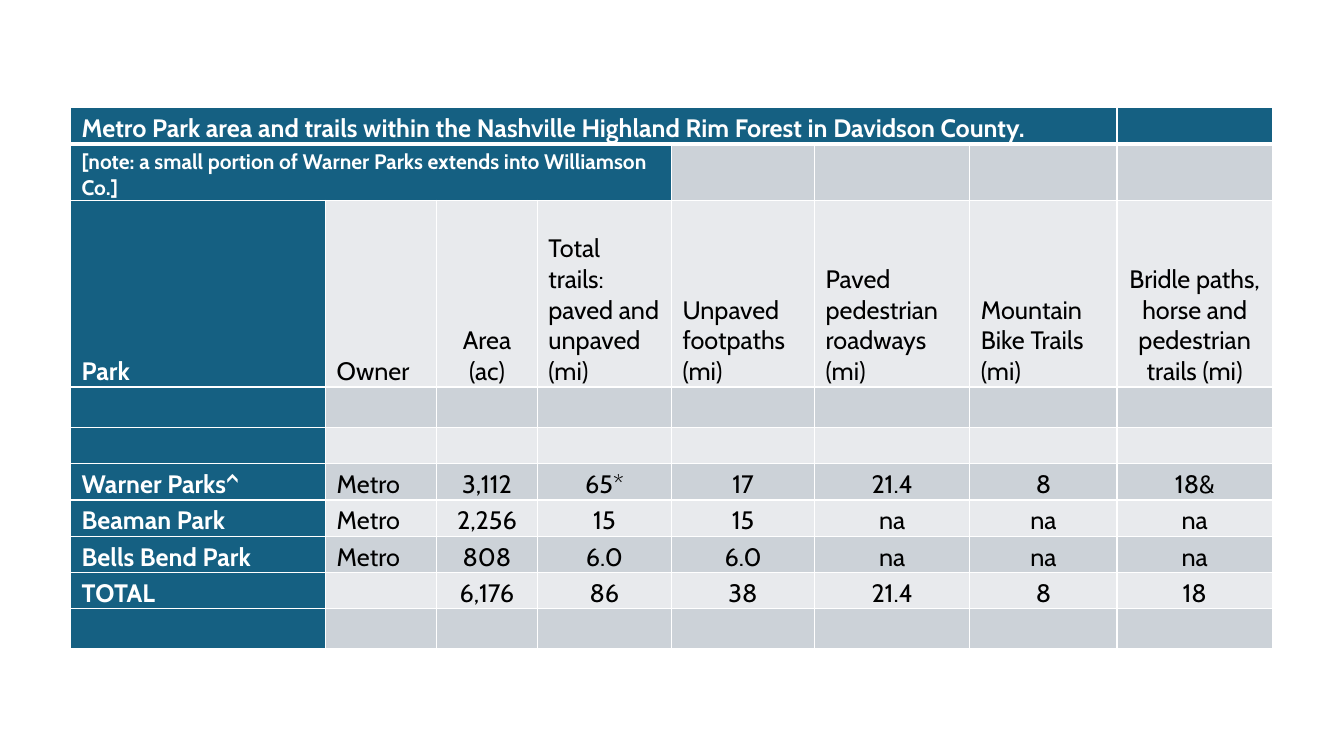
from lxml import etree
from pptx import Presentation
from pptx import util as u
from pptx.dml.color import RGBColor
from pptx.enum import text
from pptx.oxml import ns

WHITE = RGBColor(0xFF, 0xFF, 0xFF)
BLACK = RGBColor(0x00, 0x00, 0x00)
BLUE = RGBColor(0x15, 0x60, 0x82)
BAND_DARK = RGBColor(0xCC, 0xD2, 0xD8)
BAND_LIGHT = RGBColor(0xE8, 0xEA, 0xED)

# Table content
TITLE = "Metro Park area and trails within the Nashville Highland Rim Forest in Davidson County."
NOTE = "[note: a small portion of Warner Parks extends into Williamson Co.]"
COL_WIDTHS = [2.53, 1.1, 1, 1.33, 1.42, 1.54, 1.46, 1.54]
ROW_HEIGHTS = [0.36, 0.56, 1.85, 0.4, 0.36, 0.36, 0.36, 0.36, 0.36, 0.4]
EMPTY = [""] * 8
ROWS = [
    [TITLE] + [""] * 7,
    [NOTE] + [""] * 7,
    ["Park", "Owner", "Area (ac)", "Total trails: paved and unpaved (mi)",
     "Unpaved footpaths (mi)", "Paved pedestrian roadways (mi)",
     "Mountain Bike Trails (mi)", "Bridle paths, horse and pedestrian trails (mi)"],
    EMPTY,
    EMPTY,
    ["Warner Parks^", "Metro", "3,112", "65*", "17", "21.4", "8", "18&"],
    ["Beaman Park", "Metro", "2,256", "15", "15", "na", "na", "na"],
    ["Bells Bend Park", "Metro", "808", "6.0", "6.0", "na", "na", "na"],
    ["TOTAL", "", "6,176", "86", "38", "21.4", "8", "18"],
    EMPTY,
]
TITLE_ROW, NOTE_ROW, HEAD_ROW = 0, 1, 2
SPANS = {TITLE_ROW: 7, NOTE_ROW: 4}
CENTRED_HEADS = (2, 7)


class Deck:
    """Holds the style and the current slide."""

    font = "Cabin"
    size = 18

    def __init__(self):
        self.prs = Presentation()
        self.prs.slide_width = u.Inches(13.33)
        self.prs.slide_height = u.Inches(7.5)
        self.s = self.prs.slides.add_slide(self.prs.slide_layouts[6])

    def table(self, left, top, widths, heights):
        sp = self.s.shapes.add_table(
            len(heights), len(widths), u.Inches(left), u.Inches(top),
            u.Inches(sum(widths)), u.Inches(sum(heights)))
        for column, width in zip(sp.table.columns, widths):
            column.width = u.Inches(width)
        for row, height in zip(sp.table.rows, heights):
            row.height = u.Inches(height)
        return sp.table

    def cell(self, cell, words, fill, color, bold, size, centred):
        cell.margin_left = cell.margin_right = u.Inches(0.11)
        cell.margin_top = cell.margin_bottom = 0
        cell.vertical_anchor = text.MSO_ANCHOR.BOTTOM
        cell.fill.solid()
        cell.fill.fore_color.rgb = fill
        p = cell.text_frame.paragraphs[0]
        p.alignment = text.PP_ALIGN.CENTER if centred else text.PP_ALIGN.LEFT
        if words:
            r = p.add_run()
            r.text = words
            r.font.name = self.font
            r.font.size = u.Pt(size)
            r.font.bold = bold
            r.font.color.rgb = color

    def borders(self, cell, top=1, bottom=1):
        tc_pr = cell._tc.get_or_add_tcPr()
        sides = {"lnL": 1, "lnR": 1, "lnT": top, "lnB": bottom}
        # Border lines come before the fill
        for i, (side, width) in enumerate(sides.items()):
            ln = etree.Element(ns.qn("a:" + side), w=str(u.Pt(width)))
            solid = etree.SubElement(ln, ns.qn("a:solidFill"))
            etree.SubElement(solid, ns.qn("a:srgbClr"), val=str(WHITE))
            tc_pr.insert(i, ln)


def main():
    deck = Deck()
    table = deck.table(0.7, 1.07, COL_WIDTHS, ROW_HEIGHTS)

    # Fill and text, row by row
    for i, row in enumerate(ROWS):
        band = BAND_DARK if i % 2 else BAND_LIGHT
        for j, words in enumerate(row):
            blue = i == TITLE_ROW or j < (SPANS[i] if i in SPANS else 1)
            centred = j in CENTRED_HEADS if i == HEAD_ROW else j >= 2
            cell = table.cell(i, j)
            deck.cell(cell, words, BLUE if blue else band,
                      WHITE if blue else BLACK, blue,
                      15 if i == NOTE_ROW else deck.size, centred)
            deck.borders(cell, top=3 if i == NOTE_ROW else 1,
                         bottom=3 if i == TITLE_ROW else 1)

    # Title and note run across several columns
    for i, span in SPANS.items():
        table.cell(i, 0).merge(table.cell(i, span - 1))

    deck.prs.save("out.pptx")


if __name__ == "__main__":
    main()
